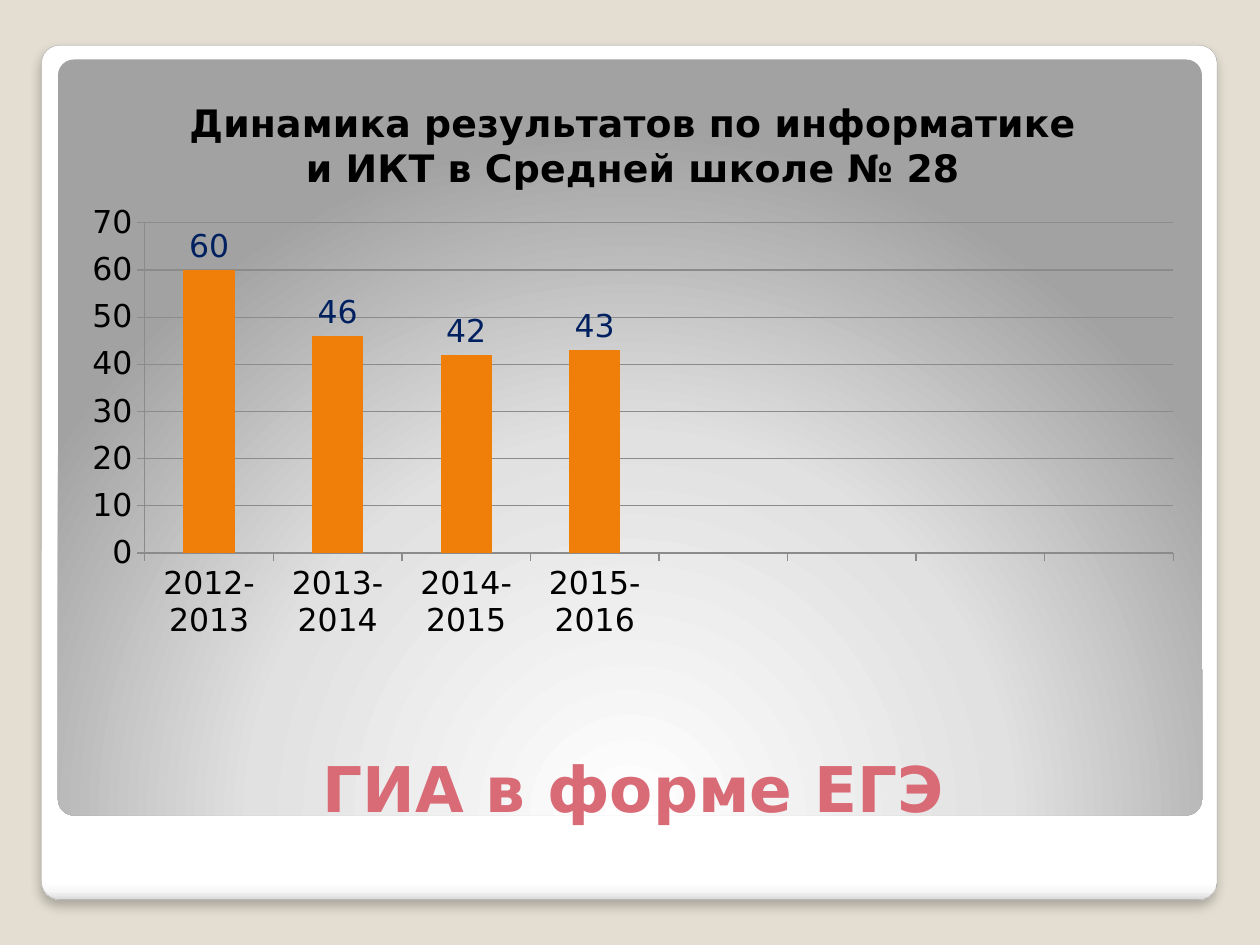
from dataclasses import dataclass

from lxml.etree import SubElement
from pptx import Presentation
from pptx.chart.data import CategoryChartData
from pptx.dml.color import RGBColor as Rgb
from pptx.enum.chart import XL_CHART_TYPE as ChartType
from pptx.enum.chart import XL_LABEL_POSITION as LabelPosition
from pptx.enum.chart import XL_TICK_MARK as TickMark
from pptx.enum.shapes import MSO_SHAPE as Preset
from pptx.enum.text import MSO_ANCHOR as Anchor
from pptx.enum.text import PP_ALIGN as Align
from pptx.oxml import parse_xml
from pptx.oxml.ns import nsdecls, qn
from pptx.util import Inches, Pt

WIDTH, HEIGHT = Inches(10), Inches(7.5)


@dataclass(frozen=True)
class Theme:
    """Colours, font and type sizes of the slide."""
    font: str = "DejaVu Sans"
    backdrop: str = "E3DED1"
    edge: str = "A4A4A4"
    heading: str = "D96B77"
    bars: str = "F07F09"
    values: str = "002060"
    ink: str = "000000"
    grid: str = "8B8B8B"
    heading_size: float = 36
    chart_title_size: float = 21.6
    chart_size: float = 18
    card_stops: tuple = ((0, "FFFFFF"), (98, "FFFFFF"), (99, "F7F7F7"), (100, "DADADA"))
    panel_stops: tuple = ((0, "FFFFFF"), (55, "E1E1E1"), (100, "A2A2A2"))


THEME = Theme()
CARD_DIRECTION = '<a:lin ang="5400000" scaled="0"/>'
PANEL_DIRECTION = ('<a:path path="circle"><a:fillToRect l="50000" t="175000" '
                   'r="50000" b="-75000"/></a:path>')
RESULTS = {"2012-2013": 60, "2013-2014": 46, "2014-2015": 42, "2015-2016": 43}
EMPTY_YEARS = 4


def place(left, top, width, height):
    """Turn shares of the slide into a position and size."""
    return [round(share * side) for share, side in
            zip((left, top, width, height), (WIDTH, HEIGHT) * 2)]


def style(target, formats):
    """Set every format value on the target."""
    for name, value in formats.items():
        setattr(target, name, value)


def style_font(font, size, colour, bold=False):
    """Give a font the theme face with a size, colour and weight."""
    style(font, {"name": THEME.font, "size": Pt(size), "bold": bold})
    font.color.rgb = Rgb.from_string(colour)


def add_panel(slide, area, stops, direction):
    """Add a rounded panel with a gradient fill."""
    panel = slide.shapes.add_shape(Preset.ROUNDED_RECTANGLE, *place(*area))
    panel.adjustments[0] = 0.021
    panel.shadow.inherit = False
    panel.line.fill.background()
    marks = "".join(f'<a:gs pos="{share * 1000}"><a:srgbClr val="{colour}"/></a:gs>'
                    for share, colour in stops)
    gradient = parse_xml(f'<a:gradFill {nsdecls("a")} rotWithShape="1">'
                         f'<a:gsLst>{marks}</a:gsLst>{direction}</a:gradFill>')
    panel._element.spPr.find(qn("a:prstGeom")).addnext(gradient)
    return panel


def raise_card(card):
    """Give the card a thin edge and a soft shadow below."""
    card.line.color.rgb = Rgb.from_string(THEME.edge)
    card.line.width = Pt(0.16)
    effects = card._element.spPr.find(qn("a:effectLst"))
    shadow = SubElement(effects, qn("a:outerShdw"), blurRad=str(Pt(6)),
                        dist=str(Pt(4)), dir="5400000", algn="t", rotWithShape="0")
    colour = SubElement(shadow, qn("a:srgbClr"), val=THEME.ink)
    SubElement(colour, qn("a:alpha"), val="25000")


def add_heading(slide, area, text):
    """Add the centred slide heading."""
    frame = slide.shapes.add_textbox(*place(*area)).text_frame
    style(frame, {"word_wrap": True, "vertical_anchor": Anchor.BOTTOM, "text": text})
    heading = frame.paragraphs[0]
    heading.alignment = Align.CENTER
    style_font(heading.runs[0].font, THEME.heading_size, THEME.heading, True)


def set_plot_area(chart, **shares):
    """Fix the inner plot area as shares of the chart."""
    plot_area = chart._chartSpace.chart.plotArea
    for layout in plot_area.findall(qn("c:layout")):
        plot_area.remove(layout)
    sizes = "".join(f'<c:{side} val="{share}"/>' for side, share in shares.items())
    plot_area.insert(0, parse_xml(
        f'<c:layout {nsdecls("c")}><c:manualLayout><c:layoutTarget val="inner"/>'
        f'<c:xMode val="edge"/><c:yMode val="edge"/>{sizes}</c:manualLayout></c:layout>'))


def style_axes(chart):
    """Draw both axes and the gridlines in the same thin grey."""
    years, scores = chart.category_axis, chart.value_axis
    style(scores, {"minimum_scale": 0, "maximum_scale": 70, "major_unit": 10,
                   "has_major_gridlines": True})
    for axis in (years, scores):
        style(axis, {"major_tick_mark": TickMark.OUTSIDE,
                     "minor_tick_mark": TickMark.NONE})
    for ruled in (years, scores, scores.major_gridlines):
        ruled.format.line.color.rgb = Rgb.from_string(THEME.grid)
        ruled.format.line.width = Pt(0.75)


def add_results_chart(slide, area, title):
    """Add the column chart of exam results by school year."""
    results = CategoryChartData()
    results.categories = [*RESULTS, *[""] * EMPTY_YEARS]
    results.add_series("Series 1", [*RESULTS.values(), *[None] * EMPTY_YEARS])
    chart = slide.shapes.add_chart(
        ChartType.COLUMN_CLUSTERED, *place(*area), results).chart
    style(chart, {"has_legend": False, "has_title": True})
    style_font(chart.font, THEME.chart_size, THEME.ink)
    chart.chart_title.text_frame.text = title
    title_run = chart.chart_title.text_frame.paragraphs[0].runs[0]
    style_font(title_run.font, THEME.chart_title_size, THEME.ink, True)
    plot = chart.plots[0]
    style(plot, {"gap_width": 150, "vary_by_categories": False, "has_data_labels": True})
    style(plot.data_labels, {"show_value": True, "position": LabelPosition.OUTSIDE_END})
    style_font(plot.data_labels.font, THEME.chart_size, THEME.values)
    bars = plot.series[0].format.fill
    bars.solid()
    bars.fore_color.rgb = Rgb.from_string(THEME.bars)
    style_axes(chart)
    set_plot_area(chart, x=0.067, y=0.26, w=0.912, h=0.572)


def main():
    """Build and save the slide."""
    deck = Presentation()
    style(deck, {"slide_width": WIDTH, "slide_height": HEIGHT})
    slide = deck.slides.add_slide(deck.slide_layouts[6])
    slide.background.fill.solid()
    slide.background.fill.fore_color.rgb = Rgb.from_string(THEME.backdrop)
    raise_card(add_panel(slide, (0.033, 0.048, 0.933, 0.904),
                         THEME.card_stops, CARD_DIRECTION))
    add_panel(slide, (0.046, 0.063, 0.908, 0.8), THEME.panel_stops, PANEL_DIRECTION)
    add_heading(slide, (0.055, 0.727, 0.895, 0.153), "ГИА в форме ЕГЭ")
    add_results_chart(slide, (0.055, 0.077, 0.895, 0.611),
                      "Динамика результатов по информатике и ИКТ в Средней школе № 28")
    deck.save("out.pptx")


if __name__ == "__main__":
    main()
